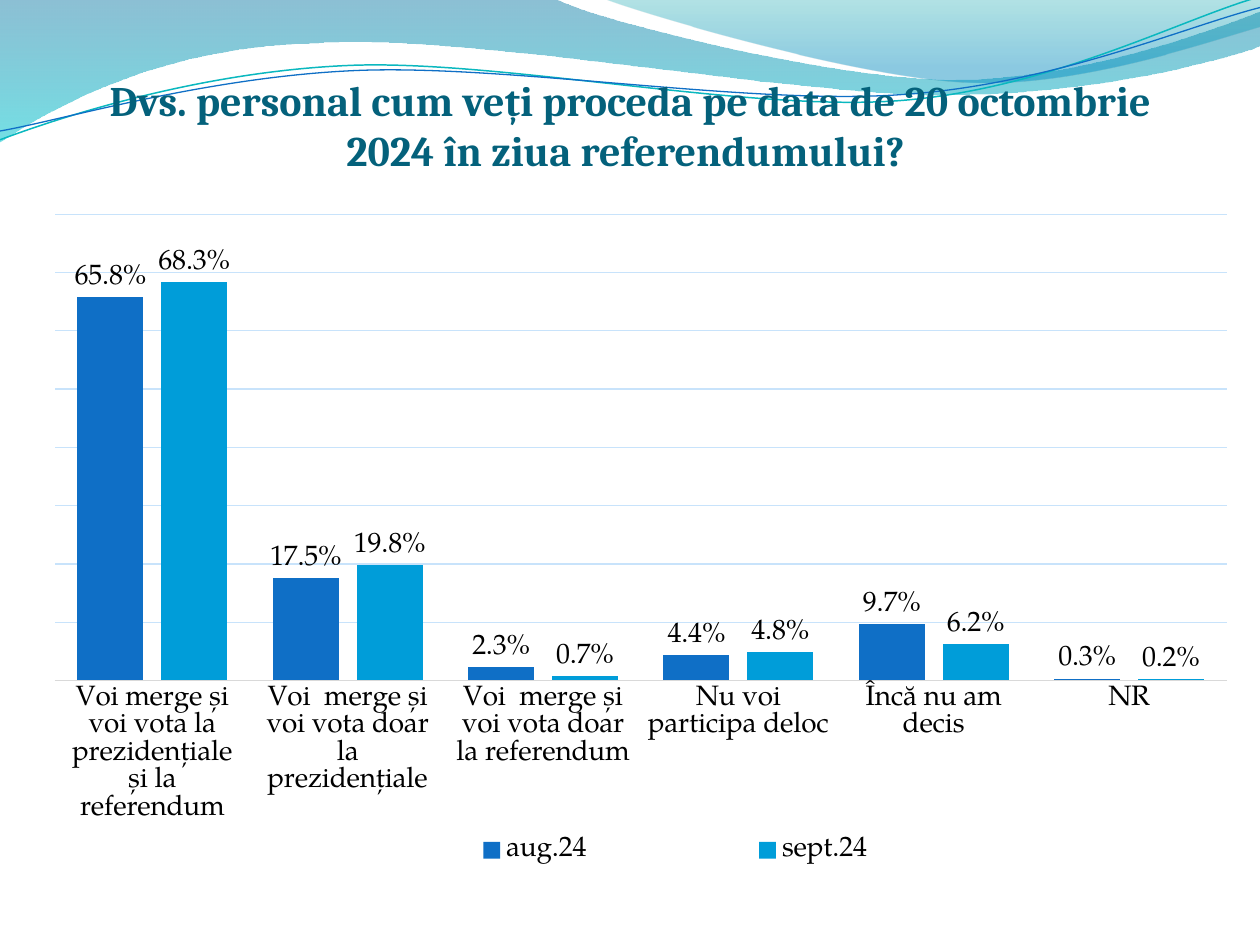
from lxml import etree
from pptx import Presentation
from pptx.chart.data import CategoryChartData
from pptx.dml.color import RGBColor
from pptx.enum import chart as charts, text
from pptx.oxml import parse_xml
from pptx.oxml.ns import nsdecls, qn
from pptx.util import Inches, Pt

NAVY = RGBColor(0x04, 0x61, 0x7B)
BLUE = RGBColor(0x0F, 0x6F, 0xC6)
SKY = RGBColor(0x00, 0x9D, 0xD9)
TEAL = RGBColor(0x0A, 0xB8, 0xBF)
WAVE_TOP = RGBColor(0x00, 0x74, 0xA1)
WAVE_BOTTOM = RGBColor(0x00, 0xC6, 0xCF)
CREST_TOP = RGBColor(0x00, 0xA1, 0xA9)
CREST_BOTTOM = RGBColor(0x00, 0x8B, 0xBF)
GRID = RGBColor(0xC8, 0xE3, 0xFB)
AXIS = RGBColor(0xD9, 0xD9, 0xD9)
BLACK = RGBColor(0, 0, 0)

CATEGORIES = [
    "Voi merge și voi vota la prezidențiale și la referendum",
    "Voi  merge și voi vota doar la prezidențiale",
    "Voi  merge și voi vota doar la referendum",
    "Nu voi participa deloc",
    "Încă nu am decis",
    "NR",
]
# name, values, colour, label format
SERIES = [
    ("aug.24", (0.658, 0.175, 0.023, 0.044, 0.097, 0.003), BLUE, "###0.0%"),
    ("sept.24", (0.683, 0.198, 0.007, 0.048, 0.062, 0.002), SKY, "0.0%"),
]

# Outlines: a pair is a straight step, six numbers are a Bezier step
WAVE = [
    (0, 0), (4.4, -0.01), (4.76, 0.17, 6.64, 0.63, 7.58, 0.63),
    (8.53, 0.63, 9.58, 0.26, 10, 0.09), (10.01, 0.36),
    (9.83, 0.44, 8.7, 0.76, 7.46, 0.75), (6.22, 0.75, 3.82, 0.28, 2.57, 0.34),
    (1.29, 0.36, 0.46, 0.83, -0.01, 1.13), (0, 0),
]
CREST = [
    (4.79, -0.01), (5.09, 0.11, 6.82, 0.62, 7.69, 0.65),
    (8.56, 0.69, 9.61, 0.32, 10, 0.21), (10, 0), (4.79, -0.01),
]
TEAL_LINE = [
    (0, 1.11), (0.48, 0.93, 1.58, 0.57, 2.77, 0.52),
    (3.95, 0.47, 5.93, 0.89, 7.13, 0.8), (8.33, 0.71, 9.38, 0.15, 9.98, -0.02),
]
BLUE_LINE = [
    (0, 1.04), (0.47, 0.96, 1.64, 0.61, 2.83, 0.56),
    (4.03, 0.51, 5.97, 0.84, 7.17, 0.75), (8.36, 0.67, 9.41, 0.21, 10, 0.06),
]


def add_outline(page, steps, close):
    """Build the outline from its end points, then bend the Bezier steps."""
    ends = [(Inches(step[-2]), Inches(step[-1])) for step in steps]
    builder = page.shapes.build_freeform(*ends[0], scale=1.0)
    builder.add_line_segments(ends[1:], close=close)
    shape = builder.convert_to_shape()
    shape.shadow.inherit = False
    left, top = (min(values) for values in zip(*ends))
    segments = list(shape.element.spPr.iter(qn("a:lnTo")))
    for segment, step in zip(segments, steps[1:]):
        if len(step) == 2:
            continue
        segment.tag = qn("a:cubicBezTo")
        for i, (x, y) in enumerate((step[:2], step[2:4])):
            corner = parse_xml(f'<a:pt {nsdecls("a")} x="{Inches(x) - left}" '
                               f'y="{Inches(y) - top}"/>')
            segment.insert(i, corner)
    return shape


def add_wave(page, steps, stops):
    """Add a filled wave; each stop is position, colour, opacity in percent."""
    shape = add_outline(page, steps, close=True)
    shape.line.fill.background()
    shape.fill.gradient()
    shape.fill.gradient_angle = 270
    for stop, (position, color, _) in zip(shape.fill.gradient_stops, stops):
        stop.position = position
        stop.color.rgb = color
    colors = shape.element.spPr.iter(qn("a:srgbClr"))
    for color, (_, _, opacity) in zip(colors, stops):
        etree.SubElement(color, qn("a:alpha")).set("val", str(opacity * 1000))


def add_wave_line(page, steps, color, width):
    shape = add_outline(page, steps, close=False)
    shape.fill.background()
    shape.line.color.rgb = color
    shape.line.width = Pt(width)


def add_header(page):
    add_wave(page, WAVE, [(0, WAVE_TOP, 45), (1, WAVE_BOTTOM, 55)])
    add_wave(page, CREST, [(0, CREST_TOP, 30), (0.8, CREST_BOTTOM, 45)])
    add_wave_line(page, TEAL_LINE, TEAL, 0.85)
    add_wave_line(page, BLUE_LINE, BLUE, 0.75)


def format_font(font, size=16, name="TeX Gyre Pagella", color=BLACK, bold=False):
    font.size = Pt(size)
    font.name = name
    font.color.rgb = color
    font.bold = bold


def write_text(frame, words, align=text.PP_ALIGN.CENTER, **font_format):
    para = frame.paragraphs[0]
    para.alignment = align
    span = para.add_run()
    span.text = words
    format_font(span.font, **font_format)


def add_title(page, left, top, width, height):
    title = page.shapes.title
    title.left, title.top, title.width, title.height = left, top, width, height
    frame = title.text_frame
    frame.margin_left = frame.margin_right = frame.margin_bottom = 0
    frame.margin_top = Inches(0.05)
    frame.vertical_anchor = text.MSO_ANCHOR.BOTTOM
    frame.auto_size = text.MSO_AUTO_SIZE.NONE
    frame.word_wrap = True
    write_text(frame, "Dvs. personal cum veți proceda pe data de 20 octombrie 2024 "
               "în ziua referendumului? ", size=24, name="Cambria", color=NAVY, bold=True)
    # Bring the title in front of the waves
    title.element.getparent().append(title.element)


def set_layout(parent, index, target="", **sizes):
    """Fix a chart part's box, in fractions of the chart."""
    for layout in parent.findall(qn("c:layout")):
        parent.remove(layout)
    values = "".join(f'<c:{key} val="{value}"/>' for key, value in sizes.items())
    parent.insert(index, parse_xml(
        f'<c:layout {nsdecls("c")}><c:manualLayout>{target}'
        f'<c:xMode val="edge"/><c:yMode val="edge"/>{values}</c:manualLayout></c:layout>'))


def add_poll_chart(page, left, top, width, height):
    data = CategoryChartData(number_format="0.0%")
    data.categories = CATEGORIES
    for name, values, _, _ in SERIES:
        data.add_series(name, values)
    chart = page.shapes.add_chart(charts.XL_CHART_TYPE.COLUMN_CLUSTERED,
                                  left, top, width, height, data).chart
    format_font(chart.font)
    chart.has_title = False
    set_layout(chart.element.find(".//" + qn("c:plotArea")), 0,
               '<c:layoutTarget val="inner"/>', x=0.016, y=0.027, w=0.968, h=0.662)

    # Columns and their labels
    plot = chart.plots[0]
    plot.gap_width, plot.overlap, plot.vary_by_categories = 69, -27, False
    for series, (_, _, color, number_format) in zip(plot.series, SERIES):
        series.format.fill.solid()
        series.format.fill.fore_color.rgb = color
        labels = series.data_labels
        labels.show_value = True
        labels.number_format = number_format
        labels.number_format_is_linked = False
        labels.position = charts.XL_LABEL_POSITION.OUTSIDE_END
        format_font(labels.font)

    # Axes
    value_axis = chart.value_axis
    value_axis.visible = False
    value_axis.minimum_scale, value_axis.maximum_scale = 0, 0.8
    value_axis.major_unit = 0.1
    value_axis.tick_labels.number_format = "###0.0%"
    value_axis.tick_labels.number_format_is_linked = False
    grid = value_axis.major_gridlines.format.line
    grid.color.rgb, grid.width = GRID, Pt(0.75)
    category_axis = chart.category_axis
    category_axis.major_tick_mark = charts.XL_TICK_MARK.NONE
    category_axis.format.line.color.rgb = AXIS
    category_axis.format.line.width = Pt(0.75)
    format_font(category_axis.tick_labels.font)

    # Legend
    chart.has_legend = True
    legend = chart.legend
    legend.position = charts.XL_LEGEND_POSITION.BOTTOM
    legend.include_in_layout = False
    format_font(legend.font)
    set_layout(chart.element.find(".//" + qn("c:legend")), 1,
               x=0.235, y=0.9, w=0.587, h=0.06)


def main():
    deck = Presentation()
    deck.slide_width, deck.slide_height = Inches(10), Inches(7.5)
    page = deck.slides.add_slide(deck.slide_layouts[5])
    add_header(page)
    add_title(page, Inches(0.5), Inches(0.6), Inches(9), Inches(0.79))
    add_poll_chart(page, Inches(0.28), Inches(1.55), Inches(9.61), Inches(5.59))
    deck.save("out.pptx")


if __name__ == "__main__":
    main()
